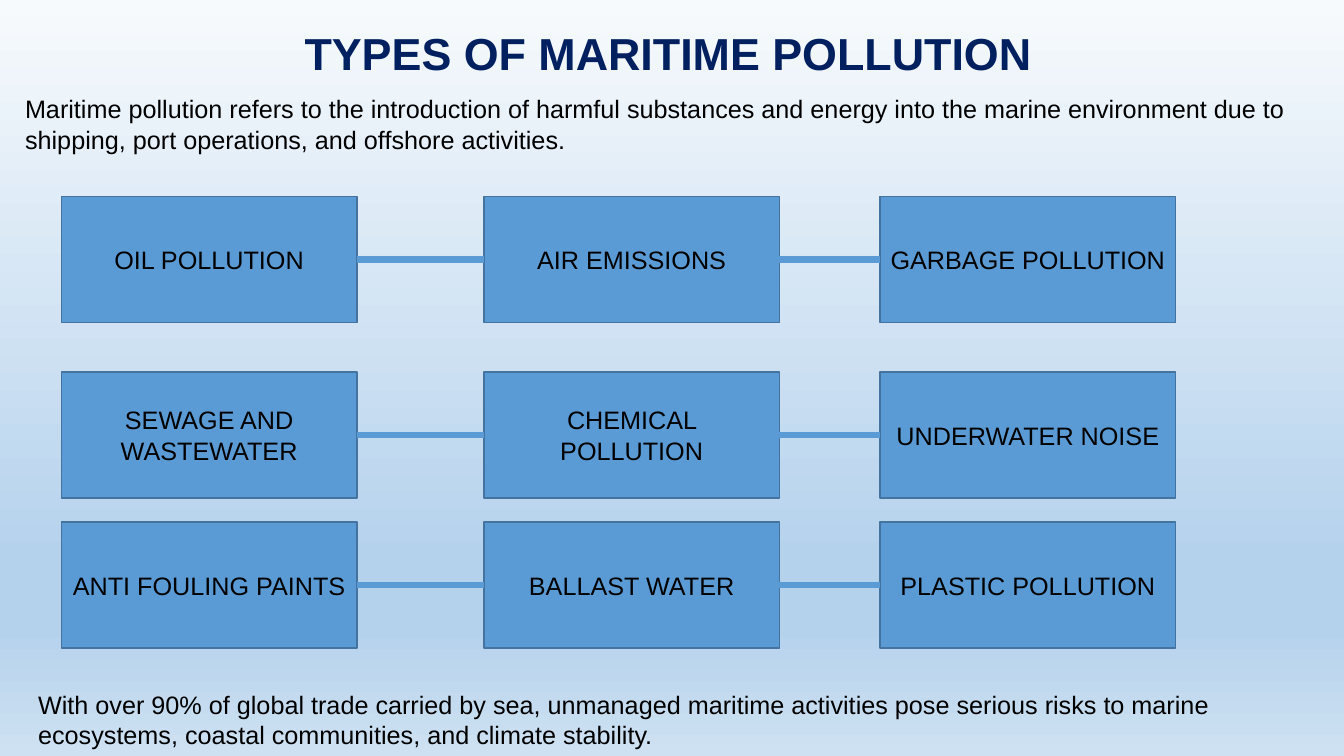
from lxml import etree
from pptx import Presentation
from pptx.dml.color import RGBColor
from pptx.enum.shapes import MSO_CONNECTOR, MSO_SHAPE
from pptx.enum.text import MSO_ANCHOR, MSO_AUTO_SIZE, PP_ALIGN
from pptx.oxml.ns import qn
from pptx.util import Inches, Pt

RECT, STRAIGHT = MSO_SHAPE.RECTANGLE, MSO_CONNECTOR.STRAIGHT
TOP, MIDDLE = MSO_ANCHOR.TOP, MSO_ANCHOR.MIDDLE
LEFT, CENTER = PP_ALIGN.LEFT, PP_ALIGN.CENTER
NO_FIT = MSO_AUTO_SIZE.NONE

NAVY = RGBColor(0x00, 0x20, 0x60)
BLACK = RGBColor(0x00, 0x00, 0x00)
BLUE = RGBColor(0x5B, 0x9B, 0xD5)
EDGE = RGBColor(0x43, 0x73, 0x9E)
SKY = [(0, RGBColor(0xF7, 0xFA, 0xFD)), (74, RGBColor(0xB5, 0xD2, 0xEC)),
       (83, RGBColor(0xB5, 0xD2, 0xEC)), (100, RGBColor(0xCE, 0xE1, 0xF2))]

# Grid of boxes, in inches
COLS = [0.61, 4.8, 8.73]
ROWS = [1.95, 3.69, 5.18]
BOX_W, BOX_H = 2.93, 1.25
TYPES = [
    ["OIL POLLUTION", "AIR EMISSIONS", "GARBAGE POLLUTION"],
    ["SEWAGE AND WASTEWATER", "CHEMICAL POLLUTION", "UNDERWATER NOISE"],
    ["ANTI FOULING PAINTS", "BALLAST WATER", "PLASTIC POLLUTION"],
]
NOTES = [
    ((0.15, 0.88, 13.01, 0.71),
     "Maritime pollution refers to the introduction of harmful substances and energy into "
     "the marine environment due to shipping, port operations, and offshore activities."),
    ((0.28, 6.79, 12.14, 0.71),
     "With over 90% of global trade carried by sea, unmanaged maritime activities pose serious "
     "risks to marine ecosystems, coastal communities, and climate stability."),
]


def write(shape, text, size=18, color=BLACK, bold=False, align=LEFT, anchor=TOP):
    tf = shape.text_frame
    tf.word_wrap = True
    tf.auto_size = NO_FIT
    tf.vertical_anchor = anchor
    p = tf.paragraphs[0]
    p.alignment = align
    r = p.add_run()
    r.text = text
    r.font.name, r.font.size, r.font.bold = "Arial", Pt(size), bold
    r.font.color.rgb = color


prs = Presentation()
prs.slide_width, prs.slide_height = Inches(13.33), Inches(7.5)
s = prs.slides.add_slide(prs.slide_layouts[5])

# Background gradient, top to bottom
fill = s.background.fill
fill.gradient()
fill.gradient_angle = 270
stops = next(s.element.iter(qn("a:gsLst")))
for stop in list(stops):
    stops.remove(stop)
for share, color in SKY:
    stop = etree.SubElement(stops, qn("a:gs"), pos=str(share * 1000))
    etree.SubElement(stop, qn("a:srgbClr"), val=str(color))

# Title
title = s.shapes.title
title.left, title.top, title.width, title.height = map(Inches, (2.92, 0.2, 9.1, 0.64))
write(title, "TYPES OF MARITIME POLLUTION", size=32, color=NAVY, bold=True)

# Introduction and closing remark
for place, text in NOTES:
    write(s.shapes.add_textbox(*map(Inches, place)), text)

# Pollution types, joined along each row
grid = s.shapes.add_group_shape().shapes
for y, names in zip(ROWS, TYPES):
    previous = None
    for x, name in zip(COLS, names):
        box = grid.add_shape(RECT, Inches(x), Inches(y), Inches(BOX_W), Inches(BOX_H))
        box.shadow.inherit = False
        box.fill.solid()
        box.fill.fore_color.rgb = BLUE
        box.line.color.rgb = EDGE
        box.line.width = Pt(1)
        write(box, name, align=CENTER, anchor=MIDDLE)
        if previous is not None:
            mid = box.top + box.height // 2
            link = grid.add_connector(STRAIGHT, previous.left + previous.width, mid,
                                      box.left, mid)
            link.begin_connect(previous, 3)
            link.end_connect(box, 1)
            link.line.color.rgb = BLUE
            link.line.width = Pt(4.5)
            etree.SubElement(link.element.spPr, qn("a:effectLst"))
        previous = box

prs.save("out.pptx")
